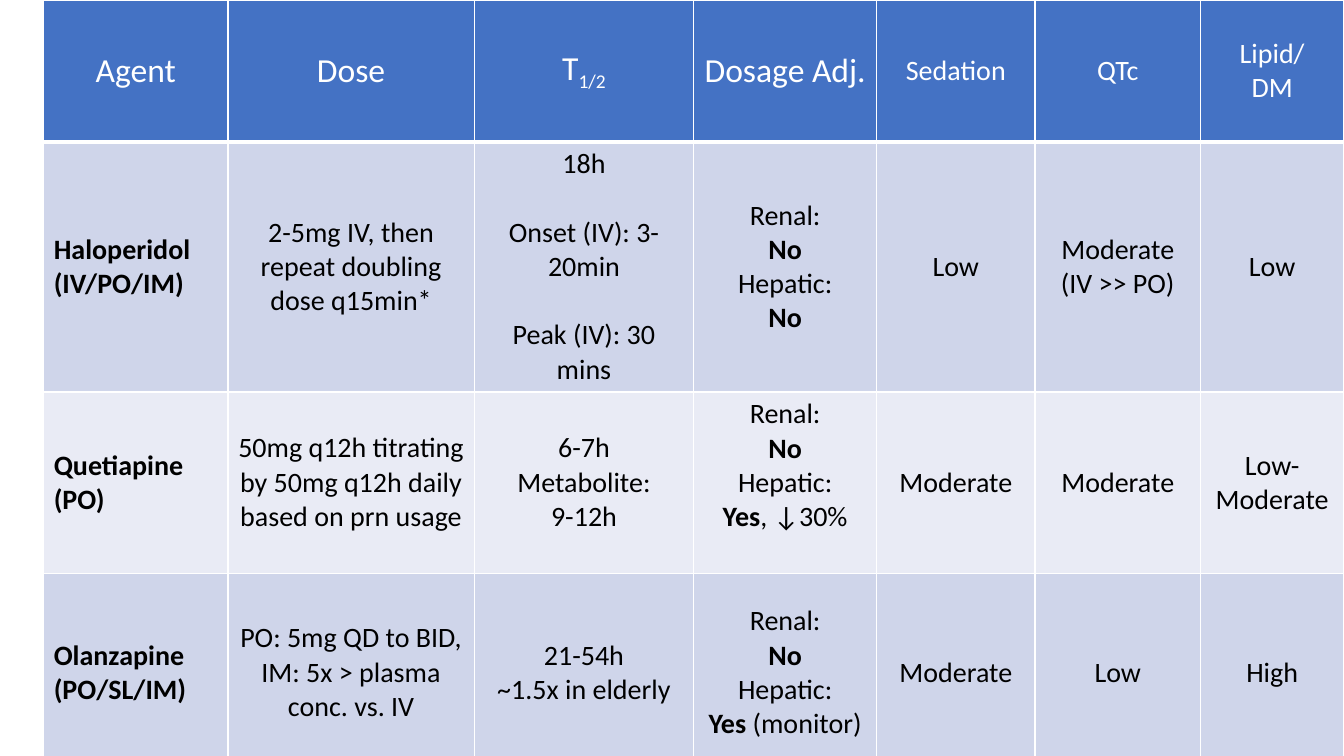
from lxml.etree import SubElement
from pptx import Presentation
from pptx.dml.color import RGBColor
from pptx.enum.text import MSO_ANCHOR as Anchor, PP_ALIGN as Align
from pptx.oxml.ns import qn
from pptx.util import Pt

WHITE = RGBColor(0xFF, 0xFF, 0xFF)
BLACK = RGBColor(0, 0, 0)
HEADER_BLUE = RGBColor(0x44, 0x72, 0xC4)
BAND_DARK = RGBColor(0xCF, 0xD5, 0xEA)
BAND_LIGHT = RGBColor(0xE9, 0xEB, 0xF5)
FONT = "Calibri"
BODY_SIZE = 20
LINE_HEIGHT = 24.4
BOLD, SUBSCRIPT = "__", "^^"

COLUMN_WIDTHS = [131.6, 176, 156.8, 130.6, 113.2, 118.2, 102.4]
ROW_HEIGHTS = [101.4, 178.6, 129.6, 141.8]
HEADERS = ["Agent", "Dose", "T^^1/2", "Dosage Adj.", "Sedation", "QTc", "Lipid/\nDM"]
HEADER_SIZES = [24] * 4 + [20] * 3
AGENTS = [
    ["Haloperidol\n(IV/PO/IM)", "2-5mg IV, then repeat doubling dose q15min*",
     "18h\nOnset (IV): 3-20min\nPeak (IV): 30 mins",
     "Renal:\n__No\nHepatic:\n__No", "Low", "Moderate (IV >> PO)", "Low"],
    ["Quetiapine\n(PO)", "50mg q12h titrating by 50mg q12h daily based on prn usage",
     "6-7h\nMetabolite:\n9-12h",
     "Renal:\n__No\nHepatic:\n__Yes__, ↓30%", "Moderate", "Moderate", "Low-Moderate"],
    ["Olanzapine\n(PO/SL/IM)", "PO: 5mg QD to BID,\nIM: 5x > plasma conc. vs. IV",
     "21-54h\n~1.5x in elderly",
     "Renal:\n__No\nHepatic:\n__Yes__ (monitor)", "Moderate", "Low", "High"],
]


def set_borders(cell, bottom_width):
    """Draw white rules on the four sides of a cell."""
    properties = cell._tc.get_or_add_tcPr()
    widths = {"a:lnL": 1, "a:lnR": 1, "a:lnT": 1, "a:lnB": bottom_width}
    for position, (side, width) in enumerate(widths.items()):
        line = SubElement(properties, qn(side), w=str(Pt(width)))
        properties.insert(position, line)
        fill = SubElement(line, qn("a:solidFill"))
        SubElement(fill, qn("a:srgbClr"), val=str(WHITE))


def add_line_text(paragraph, text):
    """Split a marked line into plain, bold and subscript runs."""
    for position, part in enumerate(text.split(BOLD)):
        if not part:
            continue
        base, _, subscript = part.partition(SUBSCRIPT)
        run = paragraph.add_run()
        run.text = base
        if position % 2:
            run.font.bold = True
        if subscript:
            lowered = paragraph.add_run()
            lowered.text = subscript
            lowered.font._element.set("baseline", "-25000")


def fill_cell(cell, text, fill, color, size=BODY_SIZE, bold=False,
              align=Align.CENTER, gap=0, bottom_width=1):
    """Write and style one table cell."""
    cell.fill.solid()
    cell.fill.fore_color.rgb = fill
    cell.vertical_anchor = Anchor.MIDDLE
    set_borders(cell, bottom_width)
    frame = cell.text_frame
    for position, line in enumerate(text.split("\n")):
        paragraph = frame.add_paragraph() if position else frame.paragraphs[0]
        paragraph.alignment = align
        if position and gap:
            paragraph.space_before = Pt(gap)
        font = paragraph.font
        font.name, font.size, font.bold = FONT, Pt(size), bold
        font.color.rgb = color
        add_line_text(paragraph, line)


def add_agent_table(slide, left, top, width, height):
    """Place the antipsychotic comparison table in the given box."""
    table = slide.shapes.add_table(
        len(ROW_HEIGHTS), len(COLUMN_WIDTHS), Pt(left), Pt(top), Pt(width), Pt(height)).table
    for column, column_width in zip(table.columns, COLUMN_WIDTHS):
        column.width = Pt(column_width)
    for row, row_height in zip(table.rows, ROW_HEIGHTS):
        row.height = Pt(row_height)
    for column, (header, size) in enumerate(zip(HEADERS, HEADER_SIZES)):
        fill_cell(table.cell(0, column), header, HEADER_BLUE, WHITE, size, bottom_width=3)
    for row, values in enumerate(AGENTS, start=1):
        band = BAND_DARK if row % 2 else BAND_LIGHT
        for column, value in enumerate(values):
            is_name = column == 0
            fill_cell(table.cell(row, column), value, band, BLACK, bold=is_name,
                      align=Align.LEFT if is_name else Align.CENTER,
                      gap=LINE_HEIGHT if (row, column) == (1, 2) else 0)
    table.cell(2, 3).margin_bottom = Pt(3.6 + LINE_HEIGHT)


def main():
    """Build the one-slide presentation."""
    presentation = Presentation()
    presentation.slide_width, presentation.slide_height = Pt(960), Pt(540)
    slide = presentation.slides.add_slide(presentation.slide_layouts[6])
    add_agent_table(slide, 31.2, 0, sum(COLUMN_WIDTHS), sum(ROW_HEIGHTS))
    presentation.save("out.pptx")


if __name__ == "__main__":
    main()
